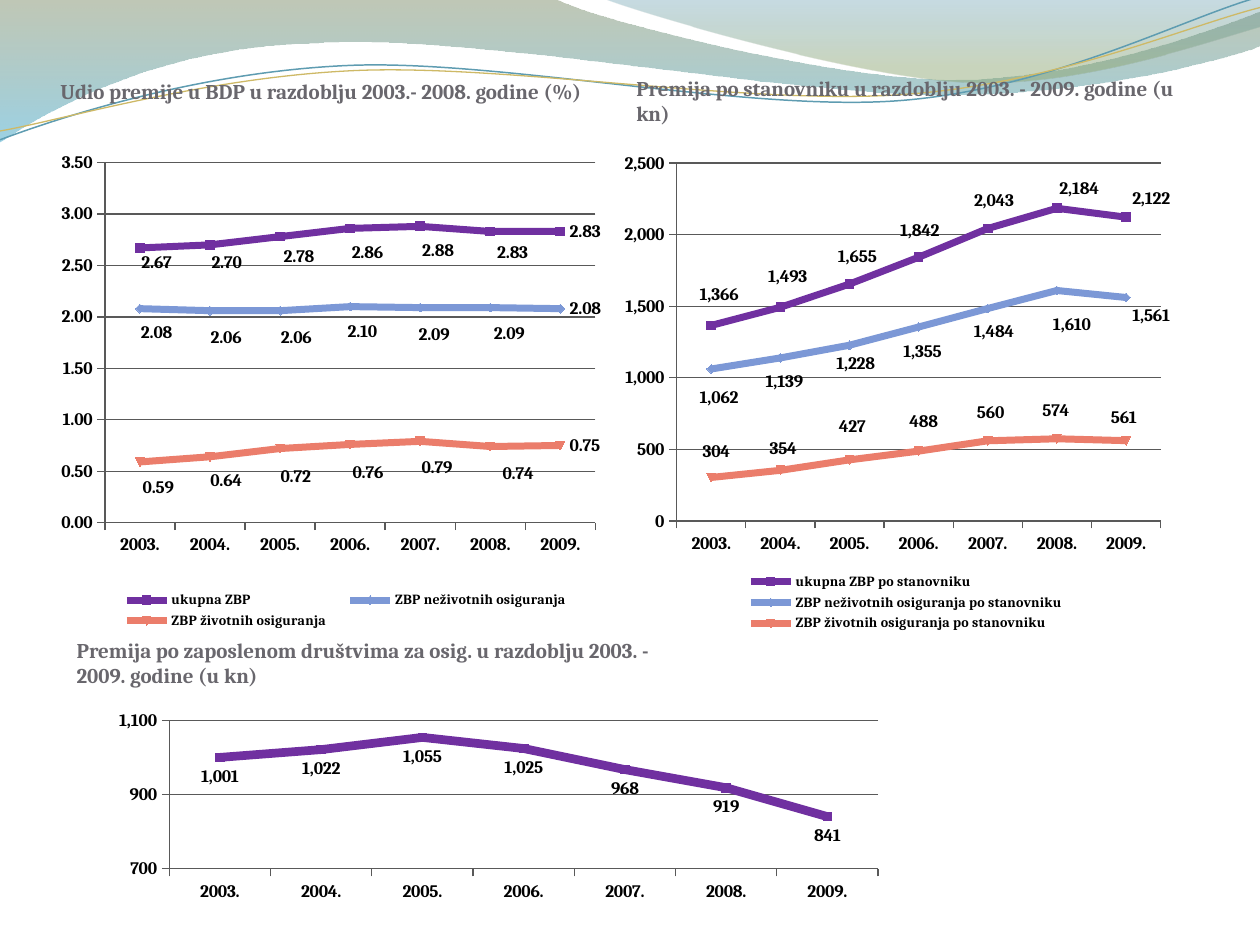
from lxml import etree
from pptx import Presentation
from pptx.chart.data import CategoryChartData
from pptx.dml.color import RGBColor
from pptx.enum.chart import (XL_CHART_TYPE, XL_LABEL_POSITION, XL_LEGEND_POSITION,
                             XL_MARKER_STYLE, XL_TICK_MARK)
from pptx.enum.text import MSO_ANCHOR
from pptx.oxml import parse_xml
from pptx.oxml.ns import nsdecls, qn
from pptx.util import Inches, Pt

color = RGBColor.from_string
FONT = "Cambria"
GRID = "595959"
HUES = ["7030A0", "7C98D6", "EB7D6B"]
YEARS = [f"{year}." for year in range(2003, 2010)]
BELOW, ABOVE, RIGHT = (XL_LABEL_POSITION.BELOW, XL_LABEL_POSITION.ABOVE,
                       XL_LABEL_POSITION.RIGHT)

deck = Presentation()
deck.slide_width, deck.slide_height = Inches(10), Inches(7.5)
slide = deck.slides.add_slide(deck.slide_layouts[6])


def text(words, left, top, width, height, anchor=MSO_ANCHOR.TOP, inset=(0.1, 0.05),
         size=12, hue="69676D"):
    box = slide.shapes.add_textbox(*map(Inches, (left, top, width, height)))
    frame = box.text_frame
    frame.word_wrap = True
    frame.vertical_anchor = anchor
    frame.margin_left = frame.margin_right = Inches(inset[0])
    frame.margin_top = frame.margin_bottom = Inches(inset[1])
    run = frame.paragraphs[0].add_run()
    run.text = words
    run.font.name, run.font.size, run.font.bold = FONT, Pt(size), True
    run.font.color.rgb = color(hue)


def place(after, modes, **spots):
    """Put a manual layout behind an element, with spots in percent of the chart."""
    layout = parse_xml(f"<c:layout {nsdecls('c')}><c:manualLayout/></c:layout>")
    shares = {tag: f"{spot / 100:.3f}" for tag, spot in spots.items()}
    for tag, val in {**modes, **shares}.items():
        etree.SubElement(layout[0], qn(f"c:{tag}")).set("val", val)
    follow = after.getnext()
    if follow is not None and follow.tag == qn("c:layout"):
        follow.getparent().remove(follow)
    after.addnext(layout)


# Waves: each step is an end point, or two handles and an end point of a curve
waves = [
    ([(-0.01, -0.01), (4.4, -0.01), (4.76, 0.17, 6.64, 0.63, 7.58, 0.63),
      (8.53, 0.63, 9.58, 0.26, 10, 0.09), (10.01, 0.36),
      (9.83, 0.44, 8.7, 0.76, 7.46, 0.75), (6.22, 0.75, 3.82, 0.28, 2.57, 0.34),
      (1.29, 0.36, 0.46, 0.83, -0.01, 1.13)],
     [("74855E", 0, 45), ("4AACCE", 1, 55)], None),
    ([(4.79, -0.01), (5.09, 0.11, 6.82, 0.62, 7.69, 0.65),
      (8.56, 0.69, 9.61, 0.32, 10, 0.21), (10, 0)],
     [("45889F", 0, 30), ("8AA36D", 0.8, 45)], None),
    ([(0, 1.11), (0.48, 0.93, 1.58, 0.57, 2.77, 0.52),
      (3.95, 0.47, 5.93, 0.89, 7.13, 0.8), (8.33, 0.71, 9.38, 0.15, 9.98, -0.02)],
     None, ("5E9CB1", 0.85)),
    ([(0, 1.04), (0.47, 0.96, 1.64, 0.61, 2.83, 0.56),
      (4.03, 0.51, 5.97, 0.84, 7.17, 0.75), (8.36, 0.67, 9.41, 0.21, 10, 0.06)],
     None, ("CEB966", 0.75)),
]
UNIT = 100
for steps, stops, line in waves:
    ends = [(step[-2] * UNIT, step[-1] * UNIT) for step in steps]
    form = slide.shapes.build_freeform(*ends[0], scale=Inches(1) / UNIT)
    form.add_line_segments(ends[1:], close=bool(stops))
    wave = form.convert_to_shape()
    wave.shadow.inherit = False
    left, top = map(min, zip(*ends))
    legs = list(wave._element.spPr.iter(qn("a:lnTo")))
    for leg, step in zip(legs, steps[1:]):
        if len(step) == 6:
            leg.tag = qn("a:cubicBezTo")
            for i, (x, y) in enumerate(zip(step[:4:2], step[1:4:2])):
                dot = etree.Element(qn("a:pt"))
                dot.set("x", str(round(x * UNIT - left)))
                dot.set("y", str(round(y * UNIT - top)))
                leg.insert(i, dot)
    if stops:
        wave.line.fill.background()
        wave.fill.gradient()
        wave.fill.gradient_angle = 270
        for stop, (hue, spot, _) in zip(wave.fill.gradient_stops, stops):
            stop.color.rgb, stop.position = color(hue), spot
        marks = wave._element.spPr.iter(qn("a:srgbClr"))
        for mark, (_, _, alpha) in zip(list(marks), stops):
            etree.SubElement(mark, qn("a:alpha")).set("val", str(alpha * 1000))
    else:
        wave.fill.background()
        wave.line.color.rgb, wave.line.width = color(line[0]), Pt(line[1])

text("Udio premije u BDP u razdoblju 2003.- 2008. godine (%)", 0.43, 0.36, 4.42, 0.72,
     anchor=MSO_ANCHOR.MIDDLE, inset=(0.05, 0))
text("Premija po stanovniku u razdoblju 2003. - 2009. godine (u kn)", 5, 0.44, 4.42, 0.72,
     anchor=MSO_ANCHOR.MIDDLE, inset=(0.05, 0))
text("Premija po zaposlenom društvima za osig. u razdoblju 2003. - 2009. godine (u kn)",
     0.51, 5.01, 5, 0.5)

# Each series: name, values, label side, label shifts across and down in percent
charts = [
    dict(at=(0.43, 0.92, 4.42, 4.21), fmt="#,##0.00", axis=(0, 3.5, 0.5), width=4,
         plot=(9.1, 8.8, 88.1, 67.9), key=(9.5, 89, 86, 8.5), rows=[
             ("ukupna ZBP", (2.67, 2.7, 2.78, 2.86, 2.88, 2.83, 2.83), BELOW,
              (3, 3, 3.4, 3.1, 3.2, 4), (-0.8, -0.2, 0.2, 0.9, 0.9, 0.4)),
             ("ZBP neživotnih osiguranja", (2.08, 2.06, 2.06, 2.1, 2.09, 2.09, 2.08), BELOW,
              (3, 2.9, 2.9, 2.2, 2.5, 3.4), (0.9, 1.4, 1.4, 1, 1.5, 1.2)),
             ("ZBP životnih osiguranja", (0.59, 0.64, 0.72, 0.76, 0.79, 0.74, 0.75), BELOW,
              (3.3, 2.9, 2.8, 3.2, 3, 5), (1.3, 0.8, 1.7, 1.7, 1.3, 1.4))]),
    dict(at=(4.92, 0.92, 4.42, 4.21), fmt="#,##0", axis=(0, 2500, 500), width=4,
         plot=(10.2, 8.9, 86.9, 67.5), key=(21.5, 85.5, 60, 12.5), rows=[
             ("ukupna ZBP po stanovniku", (1366, 1493, 1655, 1842, 2043, 2184, 2122), ABOVE,
              (1.4, 1.3, 1.4, 0.2, 1.1, 4, 4.5), (-2.3, -2.1, -1.5, -1.5, -1.7, -0.2, 0.2)),
             ("ZBP neživotnih osiguranja po stanovniku",
              (1062, 1139, 1228, 1355, 1484, 1610, 1561), BELOW,
              (1.4, 0.7, 1.1, 0.7, 1.1, 2.7, 4.5), (1.7, 0.8, -0.2, 1.1, 0.8, 2.8, -0.2)),
             ("ZBP životnih osiguranja po stanovniku", (304, 354, 427, 488, 560, 574, 561),
              ABOVE, (0.9, 0.5, 0.5, 0.9, 0.5, -0.2, -0.4),
              (-1.3, -0.4, -2.6, -1.9, -1.7, -1.7, -0.8))]),
    dict(at=(0.67, 5.56, 6.61, 1.81), fmt="#,##0", axis=(700, 1100, 200), width=5,
         plot=(10.2, 8.9, 85.1, 65), key=None, rows=[
             ("Series 1", (1001, 1022, 1055, 1025, 968, 919, 841), BELOW, (), ())]),
]
EDGE = {"xMode": "edge", "yMode": "edge"}
for item in charts:
    data = CategoryChartData(number_format=item["fmt"])
    data.categories = YEARS
    for name, vals, *_ in item["rows"]:
        data.add_series(name, vals)
    chart = slide.shapes.add_chart(XL_CHART_TYPE.LINE_MARKERS,
                                   *map(Inches, item["at"]), data).chart
    chart.has_title = False
    chart.font.name, chart.font.size, chart.font.bold = FONT, Pt(10), True
    chart.font.color.rgb = color("000000")
    chart._chartSpace.find(qn("c:txPr")).addprevious(parse_xml(
        f"<c:spPr {nsdecls('c', 'a')}><a:noFill/><a:ln><a:noFill/></a:ln></c:spPr>"))

    area = chart._chartSpace.chart.plotArea
    for old in area.findall(qn("c:layout")):
        area.remove(old)
    area.insert(0, etree.Element(qn("c:layout")))
    place(area[0], {"layoutTarget": "inner", **EDGE}, **dict(zip("xywh", item["plot"])))
    area.remove(area[0])

    scale = chart.value_axis
    scale.minimum_scale, scale.maximum_scale, scale.major_unit = item["axis"]
    scale.tick_labels.number_format = item["fmt"]
    scale.tick_labels.number_format_is_linked = False
    scale.has_major_gridlines = True
    for line in (scale.major_gridlines.format.line, scale.format.line,
                 chart.category_axis.format.line):
        line.color.rgb, line.width = color(GRID), Pt(0.75)
    for axis in (scale, chart.category_axis):
        axis.major_tick_mark = XL_TICK_MARK.OUTSIDE

    chart.has_legend = bool(item["key"])
    if item["key"]:
        key = chart.legend
        key.position, key.include_in_layout = XL_LEGEND_POSITION.BOTTOM, False
        key.font.name, key.font.size, key.font.bold = FONT, Pt(8), True
        place(key._element.find(qn("c:legendPos")), EDGE, **dict(zip("xywh", item["key"])))

    chart.plots[0].vary_by_categories = False
    for row, hue, (_, vals, side, across, down) in zip(chart.plots[0].series, HUES,
                                                       item["rows"]):
        row.smooth = False
        row.format.line.color.rgb = color(hue)
        row.format.line.width = Pt(item["width"])
        row.marker.style, row.marker.size = XL_MARKER_STYLE.AUTOMATIC, 5
        row.marker.format.fill.solid()
        row.marker.format.fill.fore_color.rgb = color(hue)
        row.marker.format.line.color.rgb = color(hue)
        tags = row.data_labels
        tags.show_value, tags.position = True, side
        tags.number_format, tags.number_format_is_linked = item["fmt"], False
        for lead in tags._element.findall(qn("c:showLeaderLines")):
            lead.set("val", "0")
        for i, (x, y) in enumerate(zip(across, down)):
            row.points[i].data_label.position = side
            spot = tags._element.findall(qn("c:dLbl"))[i]
            place(spot.find(qn("c:idx")), {}, x=x, y=y)
        if 0 < len(across) < len(vals):
            row.points[len(across)].data_label.position = RIGHT

deck.save("out.pptx")
